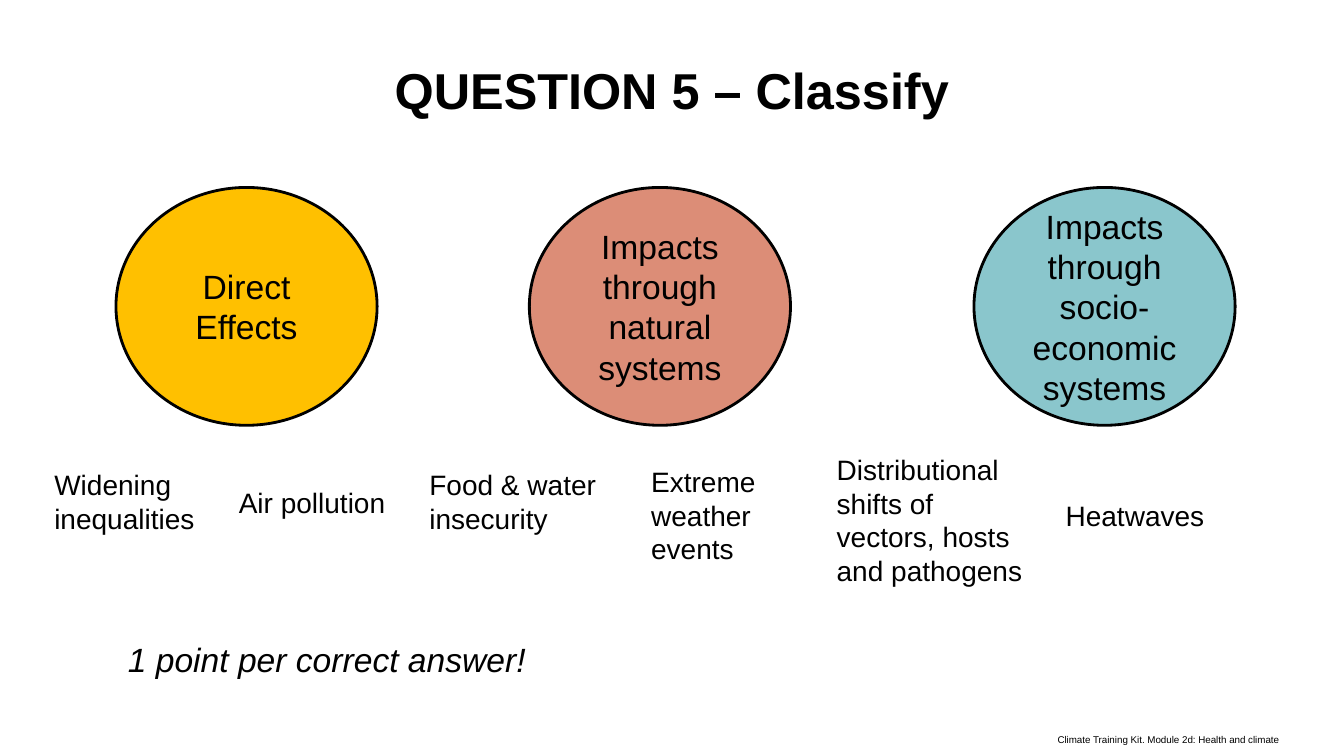
"""Build a quiz slide that sorts climate impacts into three classes."""
from dataclasses import dataclass

from pptx import Presentation
from pptx import util as u
from pptx.dml.color import RGBColor
from pptx.enum import shapes, text


@dataclass(frozen=True)
class Theme:
    font: str = "Arial"
    ink: str = "000000"
    paper: str = "FFFFFF"
    direct: str = "FFC000"
    natural: str = "DC8D77"
    social: str = "8AC6CC"
    title_size: int = 36
    class_size: int = 24
    answer_size: int = 20
    footer_size: int = 7
    outline: int = 2


class QuizSlide:
    def __init__(self, deck, theme):
        self.theme = theme
        self.page = deck.slides.add_slide(deck.slide_layouts[5])

    def color(self, value):
        return RGBColor.from_string(value)

    def set_text(self, box, words, size, bold=False, italic=False,
                 align=text.PP_ALIGN.LEFT, anchor=text.MSO_ANCHOR.TOP, spacing=1.0):
        frame = box.text_frame
        frame.word_wrap = True
        frame.auto_size = text.MSO_AUTO_SIZE.NONE
        frame.vertical_anchor = anchor
        frame.margin_left = frame.margin_right = u.Inches(0.1)
        frame.margin_top = frame.margin_bottom = u.Inches(0.05)
        para = frame.paragraphs[0]
        para.alignment = align
        para.line_spacing = spacing
        span = para.add_run()
        span.text = words
        span.font.name = self.theme.font
        span.font.size = u.Pt(size)
        span.font.bold = bold
        span.font.italic = italic
        span.font.color.rgb = self.color(self.theme.ink)

    def title(self, words, left, top, width, height):
        box = self.page.shapes.title
        box.left, box.top = u.Inches(left), u.Inches(top)
        box.width, box.height = u.Inches(width), u.Inches(height)
        box.fill.solid()
        box.fill.fore_color.rgb = self.color(self.theme.paper)
        self.set_text(box, words, self.theme.title_size, bold=True,
                      align=text.PP_ALIGN.CENTER)

    def label(self, words, left, top, width, height, size, **style):
        box = self.page.shapes.add_textbox(
            u.Inches(left), u.Inches(top), u.Inches(width), u.Inches(height))
        self.set_text(box, words, size, **style)

    def circle(self, words, left, top, width, height, fill):
        box = self.page.shapes.add_shape(
            shapes.MSO_SHAPE.OVAL,
            u.Inches(left), u.Inches(top), u.Inches(width), u.Inches(height))
        box.shadow.inherit = False
        box.fill.solid()
        box.fill.fore_color.rgb = self.color(fill)
        box.line.color.rgb = self.color(self.theme.ink)
        box.line.width = u.Pt(self.theme.outline)
        self.set_text(box, words, self.theme.class_size,
                      align=text.PP_ALIGN.CENTER, anchor=text.MSO_ANCHOR.MIDDLE)


def main():
    theme = Theme()
    deck = Presentation()
    deck.slide_width, deck.slide_height = u.Inches(13.33), u.Inches(7.5)
    quiz = QuizSlide(deck, theme)

    quiz.title("QUESTION 5 – Classify", 0, 0.54, 13.33, 0.94)

    classes = [
        ("Direct Effects", 1.15, theme.direct),
        ("Impacts through natural systems", 5.25, theme.natural),
        ("Impacts through socio-economic systems", 9.66, theme.social),
    ]
    for words, left, fill in classes:
        quiz.circle(words, left, 1.86, 2.59, 2.36, fill)

    answers = [
        ("Widening inequalities", 0.44, 4.59, 1.86, 0.77),
        ("Air pollution", 2.27, 4.77, 1.86, 0.44),
        ("Food & water insecurity", 4.16, 4.59, 1.86, 0.77),
        ("Extreme weather events", 6.36, 4.56, 1.86, 1.11),
        ("Distributional shifts of vectors, hosts and pathogens",
         8.2, 4.44, 2.13, 1.45),
        ("Heatwaves", 10.47, 4.9, 2.48, 0.44),
    ]
    for words, *place in answers:
        quiz.label(words, *place, theme.answer_size)

    quiz.label("1 point per correct answer!", 1.17, 6.21, 5.2, 0.77,
               theme.class_size, italic=True, spacing=1.21)
    quiz.label("Climate Training Kit. Module 2d: Health and climate",
               10.39, 7.23, 2.49, 0.22, theme.footer_size)

    deck.save("out.pptx")


if __name__ == "__main__":
    main()
